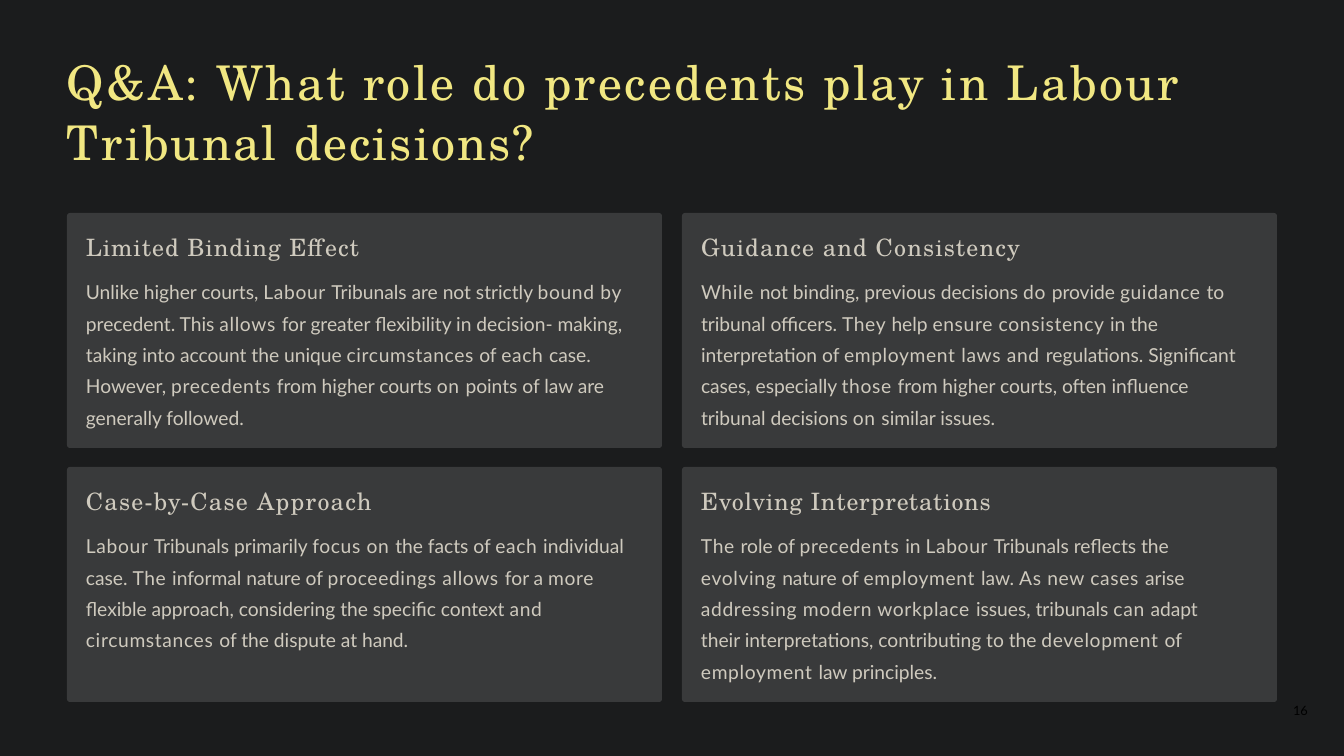
import pptx
import pptx.util
import pptx.dml.color
import pptx.enum.shapes
import pptx.enum.text

RGBColor = pptx.dml.color.RGBColor
NIGHT = RGBColor(0x1B, 0x1C, 0x1D)
PANEL = RGBColor(0x39, 0x3A, 0x3B)
YELLOW = RGBColor(0xF1, 0xE7, 0x82)
SAND = RGBColor(0xCF, 0xCA, 0xBE)
BLACK = RGBColor(0, 0, 0)
SERIF = "TeX Gyre Schola"
SANS = "Lato"

QUESTION = "Q&A: What role do precedents play in Labour *Tribunal decisions?"
ANSWERS = [
    ("Limited Binding Effect", 0.8, 546,
     "Unlike higher courts, *Labour *Tribunals are not strictly *bound by *precedent. "
     "This *allows *for greater flexibility in decision- making, taking into account the "
     "unique *circumstances* of *each *case. However, *precedents *from higher courts *on "
     "*points of law are generally followed."),
    ("Guidance and Consistency", 1, 541,
     "*While *not binding, previous decisions *do *provide *guidance *to tribunal officers. "
     "*They *help *ensure consistency *in the interpretation of *employment laws and "
     "*regulations. Significant cases, especially *those *from higher courts, often "
     "influence tribunal decisions *on *similar issues."),
    ("Case-by-Case Approach", 1.1, 546,
     "*Labour *Tribunals primarily *focus on *the facts of *each *individual case. *The "
     "*informal nature of *proceedings allows *for a *more *flexible approach, considering "
     "the specific context *and circumstances *of the dispute at hand."),
    ("Evolving Interpretations", 0.65, 514,
     "*The *role of *precedents *in *Labour *Tribunals reflects the *evolving *nature of "
     "*employment *law. *As new cases *arise *addressing modern workplace *issues, tribunals "
     "*can *adapt their interpretations, contributing to the *development *of *employment "
     "*law principles."),
]


def px(length):
    return pptx.util.Emu(round(length * 914400 / 84))


def write(paragraph, text, size, font, color, tracking=0, alternate=0, leading=1, before=0):
    paragraph.line_spacing = leading
    paragraph.space_before = pptx.util.Pt(before)
    for index, stretch in enumerate(text.split("*")):
        if not stretch:
            continue
        run = paragraph.add_run()
        run.text = stretch
        run.font.size = pptx.util.Pt(size)
        run.font.name = font
        run.font.color.rgb = color
        spacing = alternate if index % 2 else tracking
        run.font._element.set("spc", str(round(spacing * 100)))


class Deck:
    def __init__(self):
        self.presentation = pptx.Presentation()
        self.presentation.slide_width = px(1344)
        self.presentation.slide_height = px(756)
        self.slide = self.presentation.slides.add_slide(self.presentation.slide_layouts[6])
        self.slide.background.fill.solid()
        self.slide.background.fill.fore_color.rgb = NIGHT

    def text_frame(self, left, top, width, height):
        frame = self.slide.shapes.add_textbox(px(left), px(top), px(width), px(height)).text_frame
        frame.word_wrap = True
        frame.auto_size = pptx.enum.text.MSO_AUTO_SIZE.NONE
        frame.margin_left = frame.margin_top = frame.margin_right = frame.margin_bottom = 0
        return frame

    def label(self, text, left, top, width, height, **style):
        write(self.text_frame(left, top, width, height).paragraphs[0], text, **style)

    def panel(self, left, top, width, height):
        panel = self.slide.shapes.add_shape(
            pptx.enum.shapes.MSO_SHAPE.ROUNDED_RECTANGLE, px(left), px(top), px(width), px(height))
        panel.adjustments[0] = 3 / height
        panel.shadow.inherit = False
        panel.fill.solid()
        panel.fill.fore_color.rgb = PANEL
        panel.line.fill.background()

    def answer(self, left, top, heading, tracking, text_width, body):
        self.panel(left, top, 595, 235)
        frame = self.text_frame(left + 19, top + 20, text_width, 205)
        write(frame.paragraphs[0], heading, size=20.5, font=SERIF, color=SAND, tracking=tracking)
        write(frame.add_paragraph(), body, size=16.5, font=SANS, color=SAND,
              alternate=0.6, leading=1.36, before=9)


def main():
    deck = Deck()
    deck.label(QUESTION, 67, 50, 1210, 119, size=41, font=SERIF, color=YELLOW,
               tracking=2.1, alternate=1.75, leading=1.05)
    for index, answer in enumerate(ANSWERS):
        row, column = divmod(index, 2)
        deck.answer(67 + 615 * column, 213 + 254 * row, *answer)
    deck.label("16", 1293, 703, 30, 18, size=11, font=SANS, color=BLACK)
    deck.presentation.save("out.pptx")


if __name__ == "__main__":
    main()
